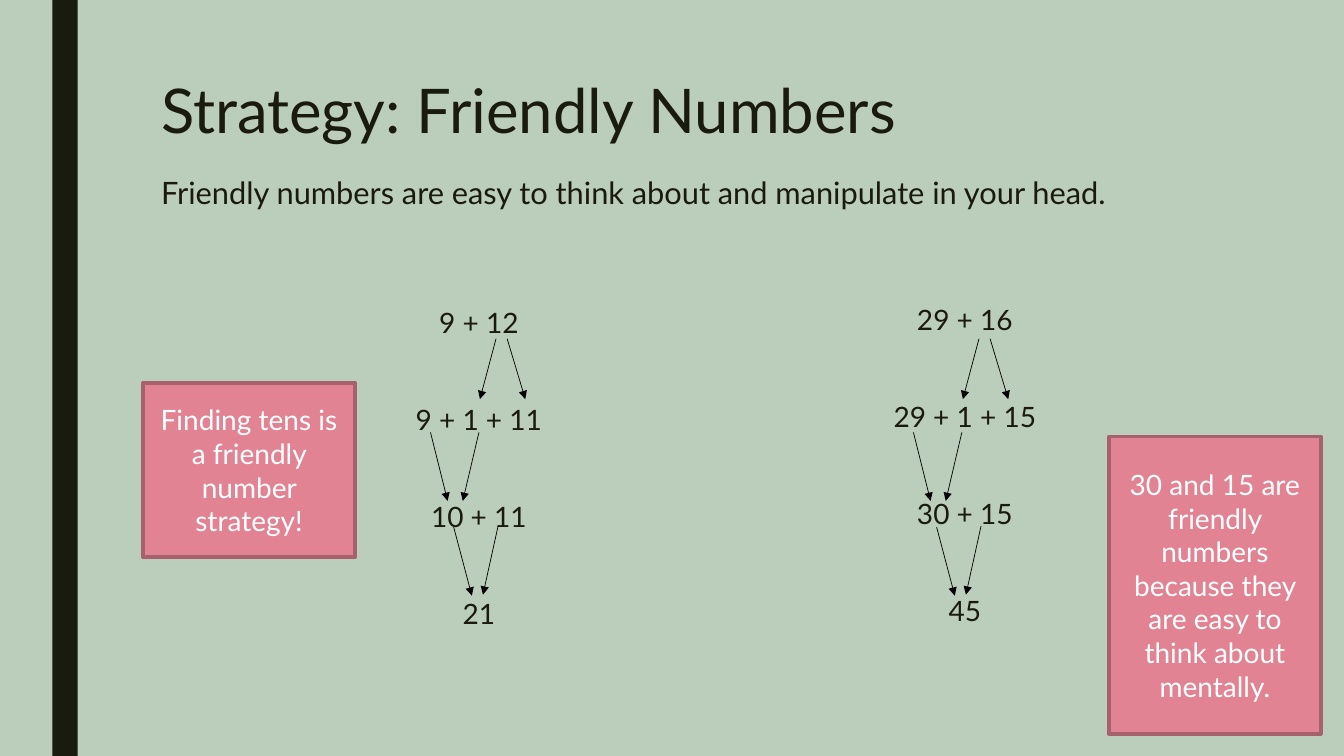
import pptx
import pptx.util
import pptx.dml.color
import pptx.enum.shapes
import pptx.enum.text
import pptx.oxml
import pptx.oxml.ns
from pptx.util import Inches

COLORS = {
    "background": "BBCDBB",
    "ink": "191B0E",
    "arrow": "000000",
    "note": "E28394",
    "note_border": "A7616D",
    "note_text": "FFFFFF",
}
FONT = "Lato"
ALIGN = pptx.enum.text.PP_ALIGN


def color(name):
    return pptx.dml.color.RGBColor.from_string(COLORS[name])


class SlideBuilder:
    def __init__(self, slide):
        self.slide = slide
        slide.background.fill.solid()
        slide.background.fill.fore_color.rgb = color("background")

    def fill_paragraph(self, paragraph, text, size, ink="ink",
                       align=ALIGN.LEFT):
        paragraph.text = text
        paragraph.alignment = align
        paragraph.font.name = FONT
        paragraph.font.size = pptx.util.Pt(size)
        paragraph.font.color.rgb = color(ink)

    def text(self, left, top, width, height, lines, spacing, gap,
             align=ALIGN.LEFT):
        """Add a text box; lines holds (text, size) pairs."""
        box = self.slide.shapes.add_textbox(
            Inches(left), Inches(top), Inches(width), Inches(height))
        frame = box.text_frame
        frame.word_wrap = True
        for index, (text, size) in enumerate(lines):
            paragraph = frame.add_paragraph() if index else frame.paragraphs[0]
            self.fill_paragraph(paragraph, text, size, align=align)
            paragraph.line_spacing = spacing
            if index:
                paragraph.space_before = pptx.util.Pt(gap)

    def rectangle(self, left, top, width, height, fill):
        shape = self.slide.shapes.add_shape(
            pptx.enum.shapes.MSO_SHAPE.RECTANGLE,
            Inches(left), Inches(top), Inches(width), Inches(height))
        shape.shadow.inherit = False
        shape.fill.solid()
        shape.fill.fore_color.rgb = color(fill)
        shape.line.fill.background()
        return shape

    def note(self, left, top, width, height, text):
        shape = self.rectangle(left, top, width, height, "note")
        shape.line.color.rgb = color("note_border")
        shape.line.width = pptx.util.Pt(2.75)
        frame = shape.text_frame
        frame.word_wrap = True
        frame.vertical_anchor = pptx.enum.text.MSO_ANCHOR.MIDDLE
        self.fill_paragraph(frame.paragraphs[0], text, 20, "note_text",
                            ALIGN.CENTER)

    def arrow(self, x1, y1, x2, y2):
        connector = self.slide.shapes.add_connector(
            pptx.enum.shapes.MSO_CONNECTOR.STRAIGHT,
            Inches(x1), Inches(y1), Inches(x2), Inches(y2))
        connector.line.color.rgb = color("arrow")
        connector.line.width = pptx.util.Pt(0.5)
        properties = connector._element.spPr
        line = properties.find(pptx.oxml.ns.qn("a:ln"))
        head = pptx.oxml.ns.qn("a:tailEnd")
        line.append(line.makeelement(head, {"type": "triangle"}))
        effects = pptx.oxml.ns.qn("a:effectLst")
        properties.append(properties.makeelement(effects, {}))


# Each arrow: start x, start y, end x, end y, with x from the column's centre
ARROWS = [
    (0.17, 3.36, 0.01, 3.96), (0.28, 3.36, 0.46, 3.96),
    (0, 4.29, -0.16, 4.97), (-0.48, 4.29, -0.31, 4.97),
    (0.19, 5.22, 0.04, 5.9), (-0.25, 5.23, -0.07, 5.91),
]
# Each worked sum: text left, text top, arrow centre, steps
SUMS = [
    (2.32, 3.01, 4.75, ["9 + 12", "9 + 1 + 11", "10 + 11", "21"]),
    (7.14, 2.98, 9.54, ["29 + 16", "29 + 1 + 15", "30 + 15", "45"]),
]


def main():
    presentation = pptx.Presentation()
    presentation.slide_width = Inches(13.33)
    presentation.slide_height = Inches(7.5)
    builder = SlideBuilder(
        presentation.slides.add_slide(presentation.slide_layouts[6]))

    # Side bar and heading
    builder.rectangle(0.52, 0, 0.25, 7.5, "ink")
    builder.text(1.5, 0.75, 10.5, 1.62, [
        ("Strategy: Friendly Numbers", 44),
        ("Friendly numbers are easy to think about and manipulate "
         "in your head.", 22),
    ], spacing=0.89, gap=23)

    # Worked sums with their arrows
    for left, top, centre, steps in SUMS:
        builder.text(left, top, 4.86, 3.4, [(step, 20) for step in steps],
                     spacing=0.94, gap=46.8, align=ALIGN.CENTER)
        for x1, y1, x2, y2 in ARROWS:
            builder.arrow(centre + x1, y1, centre + x2, y2)

    # Notes
    builder.note(1.42, 3.8, 2.1, 1.73,
                 "Finding tens is a friendly number strategy!")
    builder.note(11, 4.33, 2.1, 2.95,
                 "30 and 15 are friendly numbers because they are easy "
                 "to think about mentally.")

    presentation.save("out.pptx")


if __name__ == "__main__":
    main()
